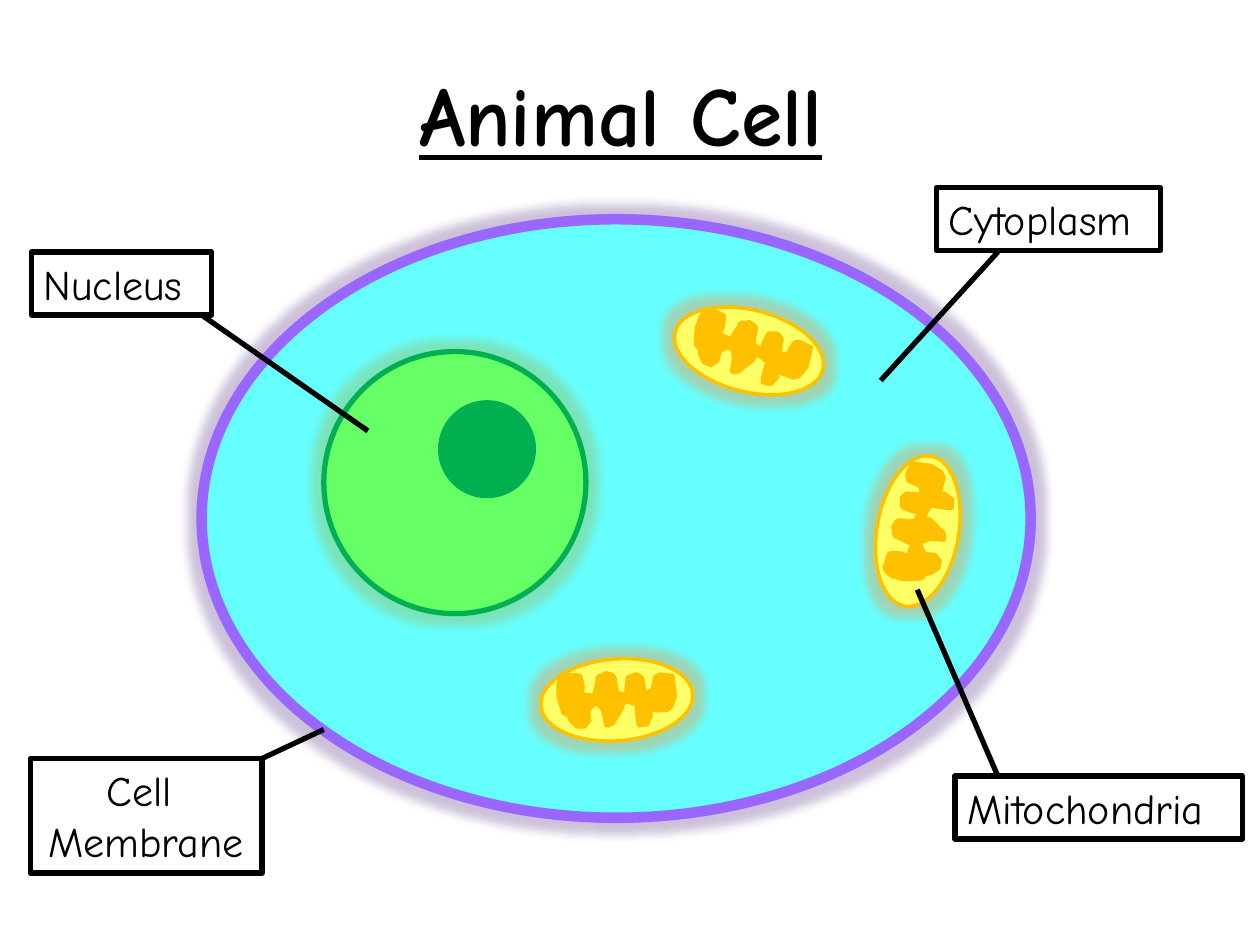
from typing import NamedTuple

from lxml.etree import SubElement
from pptx import Presentation
from pptx.dml.color import RGBColor
from pptx.enum.shapes import MSO_CONNECTOR as Connector, MSO_SHAPE as Preset
from pptx.enum.text import MSO_AUTO_SIZE as AutoSize, PP_ALIGN as Align
from pptx.oxml.ns import qn
from pptx.util import Inches, Pt

FONT = "Comic Neue"
BLACK, GREEN, ORANGE, YELLOW = "000000", "00B050", "FFC000", "FFFF66"


class Oval(NamedTuple):
    left: float
    top: float
    width: float
    height: float
    fill: str
    line: str
    line_width: float
    rotation: float = 0
    glow: str = ""
    glow_radius: float = 11


class Mitochondrion(NamedTuple):
    left: float
    top: float
    rotation: float
    fold_left: float
    fold_top: float
    fold_rotation: float


class Label(NamedTuple):
    lines: list[str]
    left: float
    top: float
    width: float
    height: float
    start: tuple[float, float]
    end: tuple[float, float]
    align: Align = Align.LEFT


CELL_PARTS = [
    Oval(1.6, 1.74, 6.58, 4.75, "66FFFF", "9966FF", 6, glow="8064A2"),
    Oval(2.57, 2.79, 2.08, 2.08, "66FF66", GREEN, 3, glow="9BBB59"),
    Oval(3.49, 3.19, 0.75, 0.75, GREEN, GREEN, 2),
]

MITOCHONDRIA = [
    Mitochondrion(6.68, 3.89, -80.2, 6.85, 3.94, -76.2),
    Mitochondrion(4.29, 5.23, -4.4, 4.43, 5.34, 0),
    Mitochondrion(5.34, 2.46, 14.2, 5.49, 2.57, 20),
]

# Outline of the inner folds, in hundredths of an inch
FOLD_POINTS = [
    (72, 30), (84, 30), (86, 30), (89, 28), (90, 27), (93, 18), (91, 2), (88, 2),
    (81, 1), (77, 3), (76, 7), (75, 13), (70, 16), (69, 15), (68, 10), (67, 4),
    (64, 2), (62, 1), (56, 3), (55, 4), (54, 13), (54, 17), (48, 16), (47, 15),
    (45, 4), (44, 2), (42, 1), (38, 0), (35, 2), (33, 2), (31, 4), (31, 7),
    (29, 15), (29, 18), (20, 17), (19, 14), (20, 12), (18, 3), (17, 2), (6, 1),
    (4, 2), (1, 6), (0, 9), (0, 19), (4, 32), (8, 34), (10, 38), (12, 40),
    (15, 43), (21, 43), (25, 38), (24, 30), (29, 25), (33, 26), (34, 28), (36, 31),
    (38, 42), (40, 42), (44, 40), (46, 36), (50, 30), (51, 28), (52, 23), (55, 23),
    (61, 25), (62, 26), (63, 38), (64, 42), (71, 41), (72, 38), (74, 34), (73, 31),
]

LABELS = [
    Label(["Nucleus"], 0.25, 2, 1.43, 0.5, (2.92, 3.42), (1.6, 2.5)),
    Label(["Cell ", "Membrane"], 0.24, 6.02, 1.84, 0.91,
          (2.57, 5.79), (2.08, 6.02), Align.CENTER),
    Label(["Cytoplasm"], 7.43, 1.49, 1.78, 0.5, (7.92, 2), (6.99, 3.02)),
    Label(["Mitochondria"], 7.58, 6.16, 2.28, 0.5, (7.92, 6.16), (7.28, 4.68)),
]


def color(value: str) -> RGBColor:
    return RGBColor.from_string(value)


def set_line(shape, value: str, width: float) -> None:
    shape.line.color.rgb = color(value)
    shape.line.width = Pt(width)


def set_style(shape, fill: str, line: str, width: float, rotation: float) -> None:
    shape.shadow.inherit = False
    shape.fill.solid()
    shape.fill.fore_color.rgb = color(fill)
    set_line(shape, line, width)
    shape.rotation = rotation


def add_glow(shape, value: str, radius: float) -> None:
    effects = shape.element.spPr.find(qn("a:effectLst"))
    glow = SubElement(effects, qn("a:glow"), rad=str(Pt(radius)))
    tint = SubElement(glow, qn("a:srgbClr"), val=value)
    SubElement(tint, qn("a:alpha"), val="40000")


def add_oval(slide, oval: Oval) -> None:
    shape = slide.shapes.add_shape(
        Preset.OVAL, Inches(oval.left), Inches(oval.top),
        Inches(oval.width), Inches(oval.height))
    set_style(shape, oval.fill, oval.line, oval.line_width, oval.rotation)
    if oval.glow:
        add_glow(shape, oval.glow, oval.glow_radius)


def add_mitochondrion(slide, item: Mitochondrion) -> None:
    add_oval(slide, Oval(item.left, item.top, 1.21, 0.65, YELLOW, ORANGE, 2,
                         item.rotation, "F79646"))
    first, *others = FOLD_POINTS
    builder = slide.shapes.build_freeform(*first, scale=Inches(0.01))
    builder.add_line_segments(others, close=True)
    folds = builder.convert_to_shape(Inches(item.fold_left), Inches(item.fold_top))
    folds.left, folds.top = Inches(item.fold_left), Inches(item.fold_top)
    set_style(folds, ORANGE, ORANGE, 2, item.fold_rotation)


def add_text(slide, lines: list[str], left: float, top: float, width: float,
             height: float, *, size: float = 24, align: Align = Align.LEFT,
             bold: bool = False, underline: bool = False, wrap: bool = False):
    box = slide.shapes.add_textbox(
        Inches(left), Inches(top), Inches(width), Inches(height))
    frame = box.text_frame
    frame.word_wrap = wrap
    frame.auto_size = AutoSize.SHAPE_TO_FIT_TEXT
    for index, line in enumerate(lines):
        paragraph = frame.add_paragraph() if index else frame.paragraphs[0]
        paragraph.alignment = align
        run = paragraph.add_run()
        run.text = line
        run.font.name = FONT
        run.font.size = Pt(size)
        run.font.bold = bold
        run.font.underline = underline
        run.font.color.rgb = color(BLACK)
    return box


def add_label(slide, label: Label) -> None:
    points = [Inches(value) for value in (*label.start, *label.end)]
    pointer = slide.shapes.add_connector(Connector.STRAIGHT, *points)
    set_line(pointer, BLACK, 3)
    SubElement(pointer.element.spPr, qn("a:effectLst"))
    box = add_text(slide, label.lines, label.left, label.top, label.width,
                   label.height, align=label.align)
    set_line(box, BLACK, 3)


def main() -> None:
    presentation = Presentation()
    presentation.slide_width, presentation.slide_height = Inches(10), Inches(7.5)
    slide = presentation.slides.add_slide(presentation.slide_layouts[6])

    # Cell body, nucleus and nucleolus
    for oval in CELL_PARTS:
        add_oval(slide, oval)

    for mitochondrion in MITOCHONDRIA:
        add_mitochondrion(slide, mitochondrion)

    # Title and labels with their pointers
    add_text(slide, ["Animal Cell"], 1.6, 0.45, 6.65, 0.91, size=48,
             align=Align.CENTER, bold=True, underline=True, wrap=True)
    for label in LABELS:
        add_label(slide, label)

    presentation.save("out.pptx")


if __name__ == "__main__":
    main()
